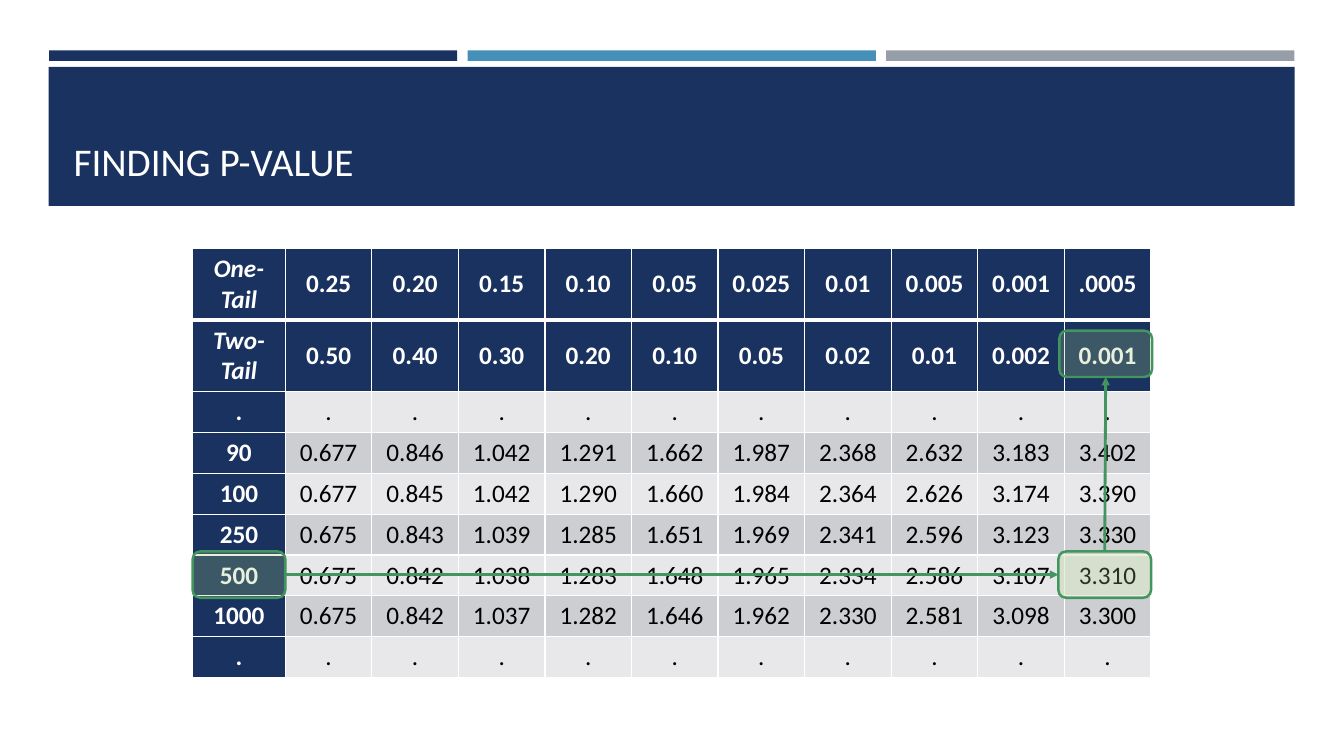
from lxml import etree
from pptx import Presentation
from pptx.dml.color import RGBColor
from pptx.enum.shapes import MSO_CONNECTOR, MSO_SHAPE
from pptx.enum.text import MSO_ANCHOR, PP_ALIGN
from pptx.oxml.ns import qn
from pptx.util import Pt

RECTANGLE = MSO_SHAPE.RECTANGLE
ROUNDED = MSO_SHAPE.ROUNDED_RECTANGLE
STRAIGHT = MSO_CONNECTOR.STRAIGHT
TOP, LEFT, RIGHT, BOTTOM = 0, 1, 3, 2
FONT = "Calibri"
COLORS = {
    "navy": "1A3260", "blue": "4590B8", "gray": "969FA7", "white": "FFFFFF",
    "black": "000000", "light": "E8E8EA", "dark": "CDCED2",
    "highlight": "A2C777", "green": "42955F",
}
ROWS = [
    "One-Tail 0.25 0.20 0.15 0.10 0.05 0.025 0.01 0.005 0.001 .0005",
    "Two-Tail 0.50 0.40 0.30 0.20 0.10 0.05 0.02 0.01 0.002 0.001",
    ". . . . . . . . . . .",
    "90 0.677 0.846 1.042 1.291 1.662 1.987 2.368 2.632 3.183 3.402",
    "100 0.677 0.845 1.042 1.290 1.660 1.984 2.364 2.626 3.174 3.390",
    "250 0.675 0.843 1.039 1.285 1.651 1.969 2.341 2.596 3.123 3.330",
    "500 0.675 0.842 1.038 1.283 1.648 1.965 2.334 2.586 3.107 3.310",
    "1000 0.675 0.842 1.037 1.282 1.646 1.962 2.330 2.581 3.098 3.300",
    ". . . . . . . . . . .",
]
HEADER_ROWS = 2


def add_block(kind, left, top, width, height, color):
    shape = slide.shapes.add_shape(kind, Pt(left), Pt(top), Pt(width), Pt(height))
    shape.shadow.inherit = False
    shape.fill.solid()
    shape.fill.fore_color.rgb = RGBColor.from_string(COLORS[color])
    shape.line.fill.background()
    return shape


def add_run(paragraph, text, size, color, bold=False, italic=False):
    run = paragraph.add_run()
    run.text = text
    run.font.name = FONT
    run.font.size = Pt(size)
    run.font.bold = bold
    run.font.italic = italic
    run.font.color.rgb = RGBColor.from_string(COLORS[color])


presentation = Presentation()
presentation.slide_width = Pt(960)
presentation.slide_height = Pt(540)
slide = presentation.slides.add_slide(presentation.slide_layouts[6])

for index, color in enumerate(["navy", "blue", "gray"]):
    add_block(RECTANGLE, 35 + index * 299, 36, 291.6, 7.5, color)
add_block(RECTANGLE, 34.8, 47.7, 889.9, 99.3, "navy")

title = slide.shapes.add_textbox(Pt(45.5), Pt(57.5), Pt(868.5), Pt(77.9))
title.text_frame.word_wrap = True
title.text_frame.vertical_anchor = MSO_ANCHOR.BOTTOM
add_run(title.text_frame.paragraphs[0], "FINDING P-VALUE", 28, "white")

column_widths = [66.2] + [61.85] * 10
row_heights = [51.2] * HEADER_ROWS + [29.17] * (len(ROWS) - HEADER_ROWS)
table = slide.shapes.add_table(
    len(ROWS), len(column_widths), Pt(137.6), Pt(177.4),
    Pt(sum(column_widths)), Pt(sum(row_heights))).table
for column, width in zip(table.columns, column_widths):
    column.width = Pt(width)

for row_index, row_text in enumerate(ROWS):
    table.rows[row_index].height = Pt(row_heights[row_index])
    band = "dark" if row_index % 2 else "light"
    for column_index, text in enumerate(row_text.split()):
        heading = row_index < HEADER_ROWS or column_index == 0
        cell = table.cell(row_index, column_index)
        cell.vertical_anchor = MSO_ANCHOR.MIDDLE
        cell.fill.solid()
        cell.fill.fore_color.rgb = RGBColor.from_string(COLORS["navy" if heading else band])
        paragraph = cell.text_frame.paragraphs[0]
        paragraph.alignment = PP_ALIGN.CENTER
        add_run(paragraph, text, 18, "white" if heading else "black", heading,
                text.endswith("Tail"))
        properties = cell._tc.get_or_add_tcPr()
        for position, side in enumerate(["lnL", "lnR", "lnT", "lnB"]):
            thick = (row_index, side) in [(0, "lnB"), (1, "lnT")]
            border = etree.Element(qn(f"a:{side}"), w=str(Pt(3 if thick else 1)))
            border_fill = etree.SubElement(border, qn("a:solidFill"))
            etree.SubElement(border_fill, qn("a:srgbClr"), val=COLORS["white"])
            properties.insert(position, border)

highlights = []
for left, top in [(137.6, 393.9), (756.7, 236.2), (756, 393.9)]:
    highlight = add_block(ROUNDED, left, top, 66.2, 33.1, "highlight")
    color_element = highlight._element.spPr.find(qn("a:solidFill"))[0]
    etree.SubElement(color_element, qn("a:alpha"), val="25000")
    highlight.line.color.rgb = RGBColor.from_string(COLORS["green"])
    highlight.line.width = Pt(1.75)
    highlights.append(highlight)

degrees_box, p_value_box, statistic_box = highlights
for start, start_side, end, end_side in [
    (degrees_box, RIGHT, statistic_box, LEFT),
    (statistic_box, TOP, p_value_box, BOTTOM),
]:
    arrow = slide.shapes.add_connector(STRAIGHT, 0, 0, 0, 0)
    arrow.begin_connect(start, start_side)
    arrow.end_connect(end, end_side)
    arrow.line.color.rgb = RGBColor.from_string(COLORS["green"])
    arrow.line.width = Pt(2)
    etree.SubElement(arrow.line._get_or_add_ln(), qn("a:tailEnd"), type="triangle")
    etree.SubElement(arrow._element.spPr, qn("a:effectLst"))

presentation.save("out.pptx")
